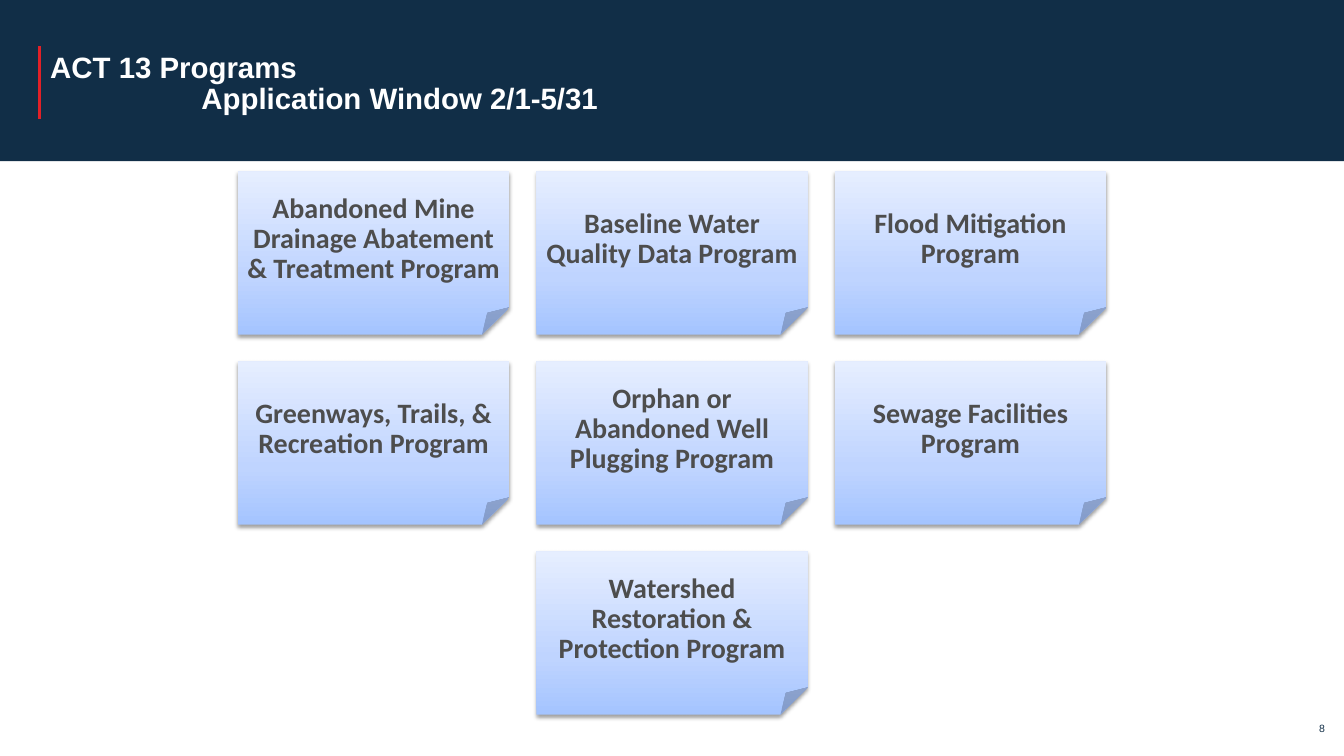
from lxml import etree
from pptx import Presentation
from pptx import util as u
from pptx.dml.color import RGBColor
from pptx.enum import shapes, text
from pptx.oxml import parse_xml
from pptx.oxml.ns import nsdecls

TITLE_LINES = [("ACT 13 Programs", 0), ("Application Window 2/1-5/31", 1.5)]
PAGE_NUMBER = "8"
PROGRAM_ROWS = [
    ["Abandoned Mine Drainage Abatement & Treatment Program",
     "Baseline Water Quality Data Program",
     "Flood Mitigation Program"],
    ["Greenways, Trails, & Recreation Program",
     "Orphan or Abandoned Well Plugging Program",
     "Sewage Facilities Program"],
    ["Watershed Restoration & Protection Program"],
]
NAVY, RED, WHITE, GREY = "112E47", "E22027", "FFFFFF", "4D4D4D"
CARD_STOPS = [(0, "A4C4FF"), (35, "BFD4FF"), (100, "E6EEFF")]

SLIDE_WIDTH, SLIDE_HEIGHT = 13.33, 7.5
CARD_WIDTH, CARD_HEIGHT = 2.69, 1.62
STEP_X, STEP_Y = 2.96, 1.885
CARDS_TOP = 1.7


def color(hex_code):
    return RGBColor.from_string(hex_code)


def add_run(paragraph, words, font_name, size, hex_code, bold=False):
    run = paragraph.add_run()
    run.text = words
    run.font.name = font_name
    run.font.size = u.Pt(size)
    run.font.bold = bold
    run.font.color.rgb = color(hex_code)


def add_text_box(slide, left, top, width, height):
    box = slide.shapes.add_textbox(*map(u.Inches, (left, top, width, height)))
    frame = box.text_frame
    frame.word_wrap = True
    frame.vertical_anchor = text.MSO_ANCHOR.MIDDLE
    return frame


def style_card(card):
    """Give a card its three-stop gradient and soft drop shadow."""
    card.line.fill.background()
    stops = "".join(f'<a:gs pos="{position * 1000}"><a:srgbClr val="{hex_code}"/></a:gs>'
                    for position, hex_code in CARD_STOPS)
    gradient = parse_xml(
        f'<a:gradFill {nsdecls("a")} rotWithShape="1"><a:gsLst>{stops}</a:gsLst>'
        '<a:lin ang="16200000" scaled="0"/></a:gradFill>')
    shadow = parse_xml(
        f'<a:effectLst {nsdecls("a")}><a:outerShdw blurRad="{u.Pt(3.1)}" '
        f'dist="{u.Pt(1.6)}" dir="5400000" rotWithShape="0">'
        '<a:srgbClr val="000000"><a:alpha val="38000"/></a:srgbClr>'
        '</a:outerShdw></a:effectLst>')
    properties = card._element.spPr
    properties.find("{*}ln").addprevious(gradient)
    properties.append(shadow)


def add_card(slide, left, top, program):
    card = slide.shapes.add_shape(
        shapes.MSO_SHAPE.FOLDED_CORNER,
        *map(u.Inches, (left, top, CARD_WIDTH, CARD_HEIGHT)))
    style_card(card)
    frame = card.text_frame
    frame.word_wrap = True
    frame.vertical_anchor = text.MSO_ANCHOR.MIDDLE
    frame.margin_left = frame.margin_right = u.Inches(0.08)
    frame.margin_top = frame.margin_bottom = u.Inches(0.08)
    paragraph = frame.paragraphs[0]
    paragraph.alignment = text.PP_ALIGN.CENTER
    paragraph.line_spacing = 0.9
    paragraph.space_after = u.Pt(7)
    add_run(paragraph, program, "Calibri", 20, GREY, bold=True)


def add_header(slide):
    band = slide.shapes.add_shape(shapes.MSO_SHAPE.RECTANGLE, 0, 0,
                                  u.Inches(SLIDE_WIDTH), u.Inches(1.6))
    band.shadow.inherit = False
    band.fill.solid()
    band.fill.fore_color.rgb = color(NAVY)
    band.line.fill.background()

    rule = slide.shapes.add_connector(
        shapes.MSO_CONNECTOR.STRAIGHT, *map(u.Inches, (0.39, 0.46, 0.39, 1.18)))
    rule.line.color.rgb = color(RED)
    rule.line.width = u.Pt(2)
    etree.SubElement(rule._element.spPr,
                     "{http://schemas.openxmlformats.org/drawingml/2006/main}effectLst")

    frame = add_text_box(slide, 0.4, 0.2, 8.47, 1.28)
    for index, (line, indent) in enumerate(TITLE_LINES):
        paragraph = frame.add_paragraph() if index else frame.paragraphs[0]
        paragraph.line_spacing = u.Pt(21.8)
        if indent:
            paragraph._p.get_or_add_pPr().set("marL", str(u.Inches(indent)))
        add_run(paragraph, line, "Arial", 21, WHITE, bold=True)


def main():
    presentation = Presentation()
    presentation.slide_width = u.Inches(SLIDE_WIDTH)
    presentation.slide_height = u.Inches(SLIDE_HEIGHT)
    slide = presentation.slides.add_slide(presentation.slide_layouts[6])

    add_header(slide)

    frame = add_text_box(slide, 12.57, 7.03, 0.67, 0.4)
    frame.paragraphs[0].alignment = text.PP_ALIGN.RIGHT
    add_run(frame.paragraphs[0], PAGE_NUMBER, "Arial", 7.5, NAVY)

    for row, programs in enumerate(PROGRAM_ROWS):
        row_width = (len(programs) - 1) * STEP_X + CARD_WIDTH
        row_left = (SLIDE_WIDTH - row_width) / 2
        for column, program in enumerate(programs):
            add_card(slide, row_left + column * STEP_X, CARDS_TOP + row * STEP_Y, program)

    presentation.save("out.pptx")


if __name__ == "__main__":
    main()
